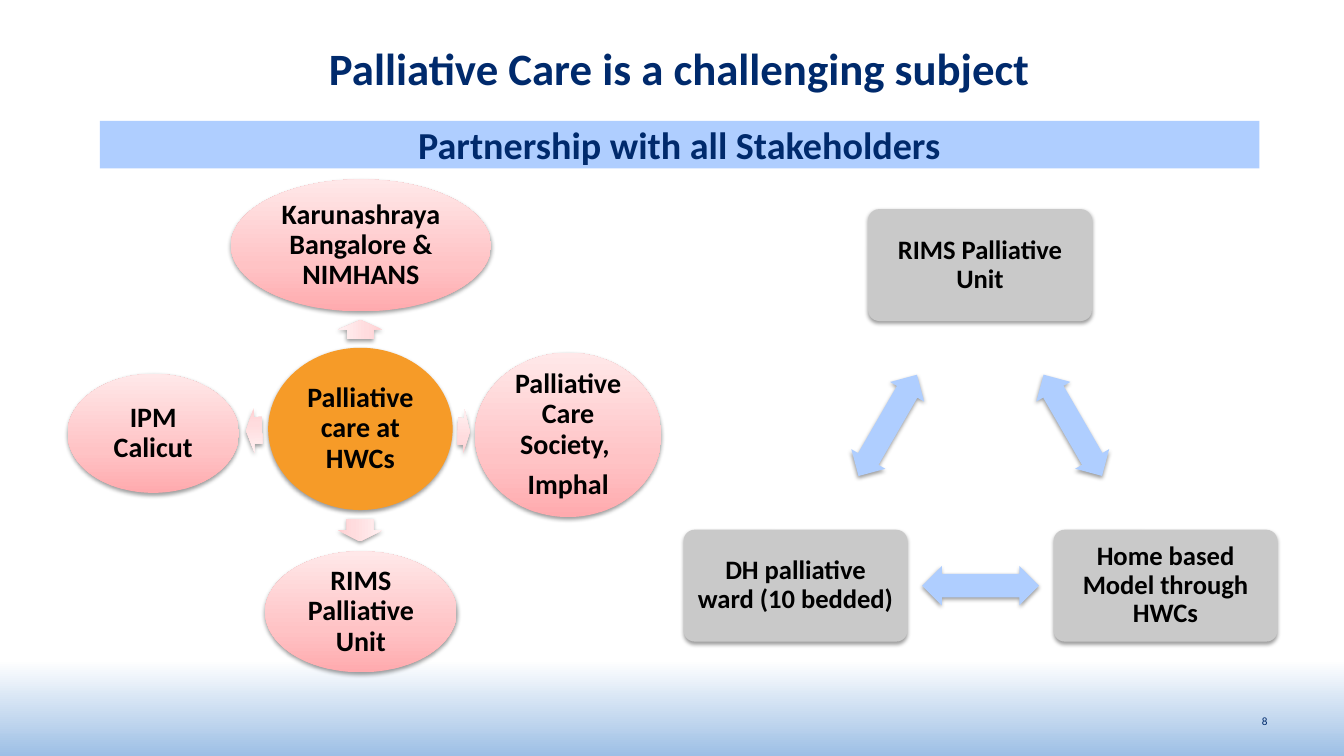
from pptx import Presentation
from pptx.dml.color import RGBColor
from pptx.enum.shapes import MSO_SHAPE as Preset
from pptx.enum.text import MSO_ANCHOR as Anchor, PP_ALIGN as Align
from pptx.oxml import parse_xml
from pptx.oxml.ns import nsdecls, qn
from pptx.util import Inches, Pt

FONT = "Calibri"
NAVY = RGBColor(0x00, 0x2A, 0x6C)
BLACK = RGBColor(0x00, 0x00, 0x00)
ORANGE = RGBColor(0xF6, 0x9B, 0x28)
GREY = RGBColor(0xC9, 0xC9, 0xC9)
LIGHT_BLUE = RGBColor(0xAF, 0xCE, 0xFF)
WHITE = RGBColor(0xFF, 0xFF, 0xFF)
SKY = RGBColor(0x9D, 0xBF, 0xE5)

# Gradients as (position in percent, colour)
PINK = [(0, RGBColor(0xFF, 0xAA, 0xAE)), (35, RGBColor(0xFF, 0xC3, 0xC5)),
        (100, RGBColor(0xFF, 0xE8, 0xE9))]
PALE_PINK = [(0, RGBColor(0xFF, 0xCF, 0xD1)), (35, RGBColor(0xFF, 0xDC, 0xDE)),
             (100, RGBColor(0xFF, 0xF1, 0xF2))]
HORIZON = [(80, WHITE), (100, SKY)]

# Partners around the hub: lines, left, top, width, height
PARTNERS = [
    (["Karunashraya Bangalore & NIMHANS"], 2.29, 1.78, 2.58, 1.31),
    (["Palliative Care Society, ", "Imphal"], 4.71, 3.5, 1.85, 1.63),
    (["RIMS Palliative Unit"], 2.63, 5.47, 1.9, 1.2),
    (["IPM Calicut"], 0.67, 3.71, 1.7, 1.18),
]
# Arrows from the hub: left, top, width, rotation
HUB_ARROWS = [(3.48, 3.05, 0.19, 270), (4.54, 4.06, 0.12, 1.8),
              (3.46, 5.04, 0.22, 90), (2.44, 4.05, 0.16, 178.8)]

# Corners of the care triangle: text, centre x, centre y
UNITS = [
    ("RIMS Palliative Unit", 9.72, 2.63),
    ("Home based Model through HWCs", 11.56, 5.81),
    ("DH palliative ward (10 bedded)", 7.89, 5.81),
]
UNIT_SIZE = (2.22, 1.11)
LINK_SIZE = (1.16, 0.39)
LINK_ANGLES = [60, 180, 300]


def fill_gradient(shape, stops, angle):
    shape.fill.gradient()
    shape.fill.gradient_angle = angle
    stop_list = shape.element.spPr.find(qn("a:gradFill")).find(qn("a:gsLst"))
    for stop in list(stop_list):
        stop_list.remove(stop)
    for position, color in stops:
        stop_list.append(parse_xml(
            f'<a:gs {nsdecls("a")} pos="{position * 1000}">'
            f'<a:srgbClr val="{color}"/></a:gs>'))


def add_soft_shadow(shape):
    shape.element.spPr.find(qn("a:effectLst")).append(parse_xml(
        f'<a:outerShdw {nsdecls("a")} blurRad="{Pt(3.1)}" dist="{Pt(1.6)}" '
        'dir="5400000" rotWithShape="0"><a:srgbClr val="000000">'
        '<a:alpha val="38000"/></a:srgbClr></a:outerShdw>'))


def add_block(slide, preset, box, fill, angle=90, rotation=0, adjust=(),
              shadow=True):
    """Add a borderless shape; fill is one colour or a list of stops."""
    block = slide.shapes.add_shape(preset, *map(Inches, box))
    block.rotation = rotation
    for index, value in enumerate(adjust):
        block.adjustments[index] = value
    if isinstance(fill, list):
        fill_gradient(block, fill, angle)
    else:
        block.fill.solid()
        block.fill.fore_color.rgb = fill
    block.line.fill.background()
    block.shadow.inherit = False
    if shadow:
        add_soft_shadow(block)
    return block


def write(shape, lines, size, color, bold=True, align=Align.CENTER,
          anchor=Anchor.MIDDLE, inset=(0, 0), line_spacing=1, before=0, after=0):
    frame = shape.text_frame
    frame.word_wrap = True
    frame.vertical_anchor = anchor
    frame.margin_left = frame.margin_right = Inches(inset[0])
    frame.margin_top = frame.margin_bottom = Inches(inset[1])
    frame.text = "\n".join(lines)
    for paragraph in frame.paragraphs:
        paragraph.alignment = align
        paragraph.line_spacing = line_spacing
        paragraph.space_before = Pt(before)
        paragraph.space_after = Pt(after)
        font = paragraph.font
        font.name, font.size, font.bold = FONT, Pt(size), bold
        font.color.rgb = color


def write_label(shape, lines, size, inset):
    write(shape, lines, size, BLACK, inset=(inset, inset), line_spacing=0.9,
          after=size * 0.35)


def add_textbox(slide, box, text, size, **style):
    textbox = slide.shapes.add_textbox(*map(Inches, box))
    write(textbox, [text], size, NAVY, **style)


def centred(x, y, size):
    width, height = size
    return x - width / 2, y - height / 2, width, height


def add_partner_wheel(slide):
    hub = add_block(slide, Preset.OVAL, (2.66, 3.45, 1.83, 1.61), ORANGE)
    write_label(hub, ["Palliative care at HWCs"], 20, 0.03)
    for left, top, width, rotation in HUB_ARROWS:
        add_block(slide, Preset.RIGHT_ARROW, (left, top, width, 0.44), PALE_PINK,
                  rotation=rotation, adjust=(0.6, 0.5))
    for lines, *box in PARTNERS:
        partner = add_block(slide, Preset.OVAL, box, PINK)
        write_label(partner, lines, 20, 0.03)


def add_care_triangle(slide):
    for index, (name, x, y) in enumerate(UNITS):
        unit = add_block(slide, Preset.ROUNDED_RECTANGLE,
                         centred(x, y, UNIT_SIZE), GREY, adjust=(0.1,))
        write_label(unit, [name], 19, 0.08)
        # Each link sits midway between this unit and the next
        _, next_x, next_y = UNITS[(index + 1) % len(UNITS)]
        middle = centred((x + next_x) / 2, (y + next_y) / 2, LINK_SIZE)
        add_block(slide, Preset.LEFT_RIGHT_ARROW, middle, LIGHT_BLUE,
                  rotation=LINK_ANGLES[index], adjust=(0.6, 0.5))


def main():
    deck = Presentation()
    deck.slide_width, deck.slide_height = Inches(13.33), Inches(7.5)
    slide = deck.slides.add_slide(deck.slide_layouts[6])

    # Background, title and page number
    add_block(slide, Preset.RECTANGLE, (0, 2.75, 13.33, 4.75), HORIZON,
              angle=270, shadow=False)
    add_textbox(slide, (0.99, 0.33, 11.5, 0.61),
                "Palliative Care is a challenging subject", 32,
                anchor=Anchor.BOTTOM)
    add_textbox(slide, (9.56, 6.95, 3.11, 0.4), "8", 8, bold=False,
                align=Align.RIGHT, inset=(0.1, 0.05))

    # Diagrams
    add_partner_wheel(slide)
    add_care_triangle(slide)

    # Subtitle band
    band = add_block(slide, Preset.RECTANGLE, (0.99, 1.2, 11.5, 0.47),
                     LIGHT_BLUE, shadow=False)
    write(band, ["Partnership with all Stakeholders"], 27.2, NAVY,
          inset=(0.07, 0.04), before=5.44)

    deck.save("out.pptx")


if __name__ == "__main__":
    main()
